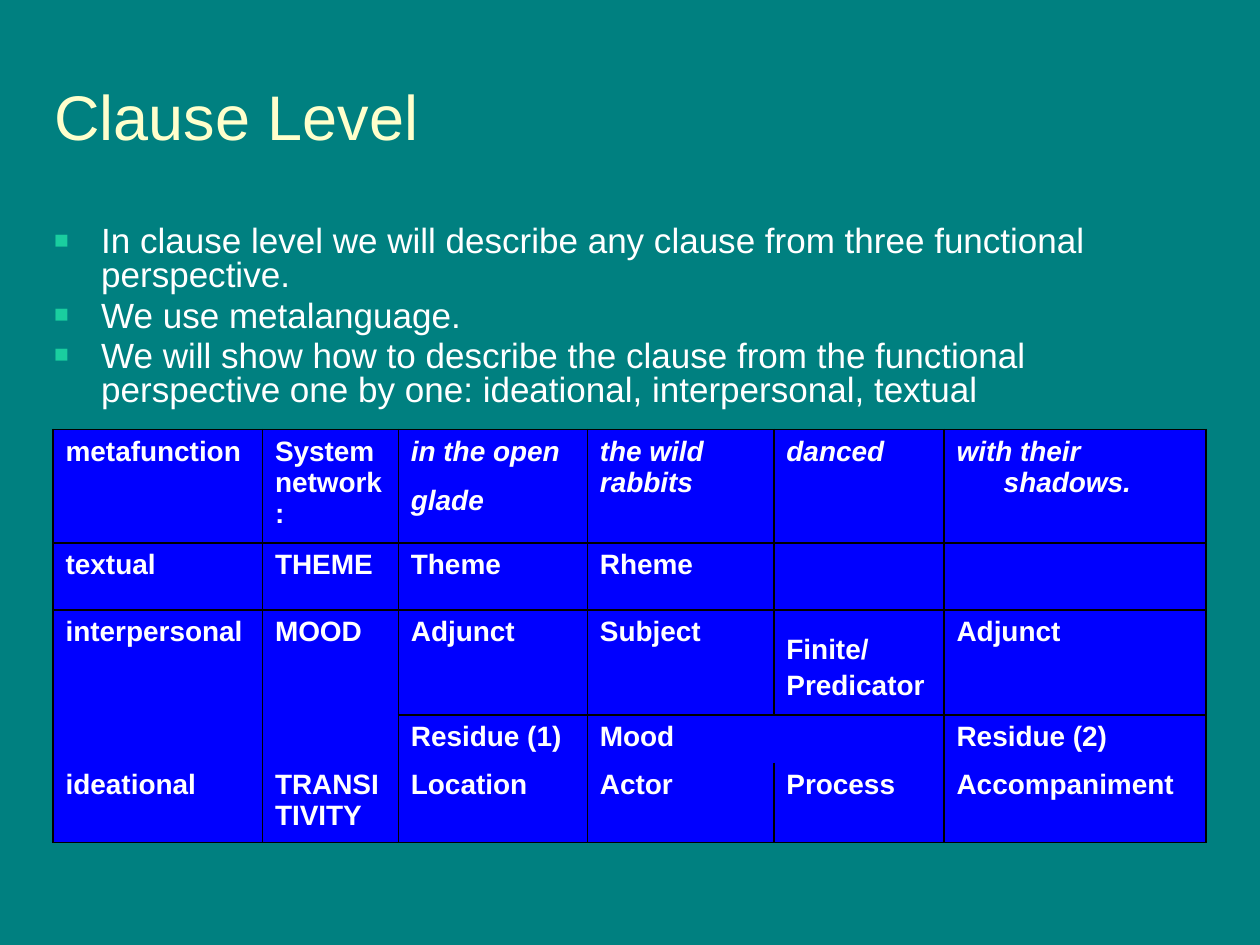
from lxml import etree
from pptx import Presentation
from pptx import util as u
from pptx.dml.color import RGBColor
from pptx.enum import text
from pptx.oxml import ns

TEAL = RGBColor(0x00, 0x80, 0x80)
CREAM = RGBColor(0xFF, 0xFF, 0xCC)
WHITE = RGBColor(0xFF, 0xFF, 0xFF)
BLUE = RGBColor(0x00, 0x00, 0xFF)
MINT = RGBColor(0x1A, 0xCE, 0x9F)
BLACK = RGBColor(0x00, 0x00, 0x00)

HANG = u.Cm(0.95)
WIDE_SPACE = " "

BULLETS = [
    "In clause level we will describe any clause from three functional perspective.",
    "We use metalanguage.",
    "We will show how to describe the clause from the functional "
    "perspective one by one: ideational, interpersonal, textual",
]
COLUMNS = [4.22, 2.74, 3.81, 3.76, 3.43, 5.28]
ROWS = [2.14, 1.35, 1.97, 0.96, 1.5]
CELLS = [
    ["metafunction", "System network:", "in the open glade" + WIDE_SPACE,
     "the wild rabbits", "danced", "with their shadows."],
    ["textual", "THEME", "Theme", "Rheme", "", ""],
    ["interpersonal", "MOOD", "Adjunct", "Subject",
     "Finite/" + WIDE_SPACE + "\nPredicator", "Adjunct"],
    ["", "", "Residue (1)", "Mood", "", "Residue (2)"],
    ["ideational", "TRANSITIVITY", "Location", "Actor", "Process", "Accompaniment"],
]
MERGES = [((2, 0), (3, 0)), ((2, 1), (3, 1)), ((3, 3), (3, 4))]
FLAT_CELLS = {(0, 0), (0, 1), (0, 2), (0, 3), (4, 1)}
MOOD_ROW, IDEATIONAL_ROW = 3, 4


def add_element(parent, tag, **attributes):
    return etree.SubElement(parent, ns.qn(tag), attributes)


def add_span(para, words, size, color, font="Arial", bold=False, italic=False):
    span = para.add_run()
    span.text = words
    span.font.name = font
    span.font.size = u.Pt(size)
    span.font.color.rgb = color
    span.font.bold = bold
    span.font.italic = italic


def set_hanging(para):
    properties = para._p.get_or_add_pPr()
    properties.set("marL", str(HANG))
    properties.set("indent", str(-HANG))


def set_bullet(para):
    properties = para._p.get_or_add_pPr()
    color = add_element(properties, "a:buClr")
    add_element(color, "a:srgbClr", val=str(MINT))
    add_element(properties, "a:buSzPct", val="70000")
    add_element(properties, "a:buFont", typeface="Arial")
    add_element(properties, "a:buChar", char="■")


def write_text(frame, lines, hanging=False, bullet=False, spacing=None, before=0, **font):
    for index, line in enumerate(lines):
        para = frame.add_paragraph() if index else frame.paragraphs[0]
        para.space_before = u.Pt(before)
        if spacing:
            para.line_spacing = spacing
        if hanging:
            set_hanging(para)
        if bullet:
            set_bullet(para)
        words = line.removesuffix(WIDE_SPACE)
        add_span(para, words, **font)
        if words != line:
            add_span(para, WIDE_SPACE, **(font | {"size": 28, "font": "Times New Roman"}))


def add_text_box(page, left, top, width, height, lines, anchor, **style):
    box = page.shapes.add_textbox(u.Cm(left), u.Cm(top), u.Cm(width), u.Cm(height))
    box.text_frame.word_wrap = True
    box.text_frame.vertical_anchor = anchor
    write_text(box.text_frame, lines, **style)


def set_borders(cell, hidden=()):
    properties = cell._tc.get_or_add_tcPr()
    for index, side in enumerate(("lnL", "lnR", "lnT", "lnB")):
        line = etree.Element(ns.qn("a:" + side), w=str(u.Pt(1)))
        if side in hidden:
            add_element(line, "a:noFill")
        else:
            fill = add_element(line, "a:solidFill")
            add_element(fill, "a:srgbClr", val=str(BLACK))
        properties.insert(index, line)


def add_clause_table(page):
    table = page.shapes.add_table(
        len(ROWS), len(COLUMNS), u.Cm(1.07), u.Cm(8.66),
        u.Cm(sum(COLUMNS)), u.Cm(sum(ROWS))).table
    table.first_row = table.horz_banding = False
    for column, width in zip(table.columns, COLUMNS):
        column.width = u.Cm(width)
    for row, height in zip(table.rows, ROWS):
        row.height = u.Cm(height)
    for start, end in MERGES:
        table.cell(*start).merge(table.cell(*end))
    hidden = {MOOD_ROW: ("lnB",), IDEATIONAL_ROW: ("lnT",)}
    for row, contents in enumerate(CELLS):
        for column, words in enumerate(contents):
            cell = table.cell(row, column)
            cell.fill.solid()
            cell.fill.fore_color.rgb = BLUE
            set_borders(cell, hidden.get(row, ()))
            if words:
                write_text(cell.text_frame, words.split("\n"),
                           hanging=(row, column) not in FLAT_CELLS,
                           size=16, color=WHITE, bold=True,
                           italic=row == 0 and column > 1)


def main():
    deck = Presentation()
    deck.slide_width, deck.slide_height = u.Cm(25.4), u.Cm(19.05)
    page = deck.slides.add_slide(deck.slide_layouts[6])
    page.background.fill.solid()
    page.background.fill.fore_color.rgb = TEAL
    add_text_box(page, 0.84, 0.64, 23.7, 3.38, ["Clause Level"],
                 text.MSO_ANCHOR.MIDDLE, size=36, color=CREAM)
    add_text_box(page, 0.84, 4.45, 23.27, 4.22, BULLETS, text.MSO_ANCHOR.TOP,
                 hanging=True, bullet=True, spacing=0.8, before=4,
                 size=20, color=WHITE)
    add_clause_table(page)
    deck.save("out.pptx")


if __name__ == "__main__":
    main()
